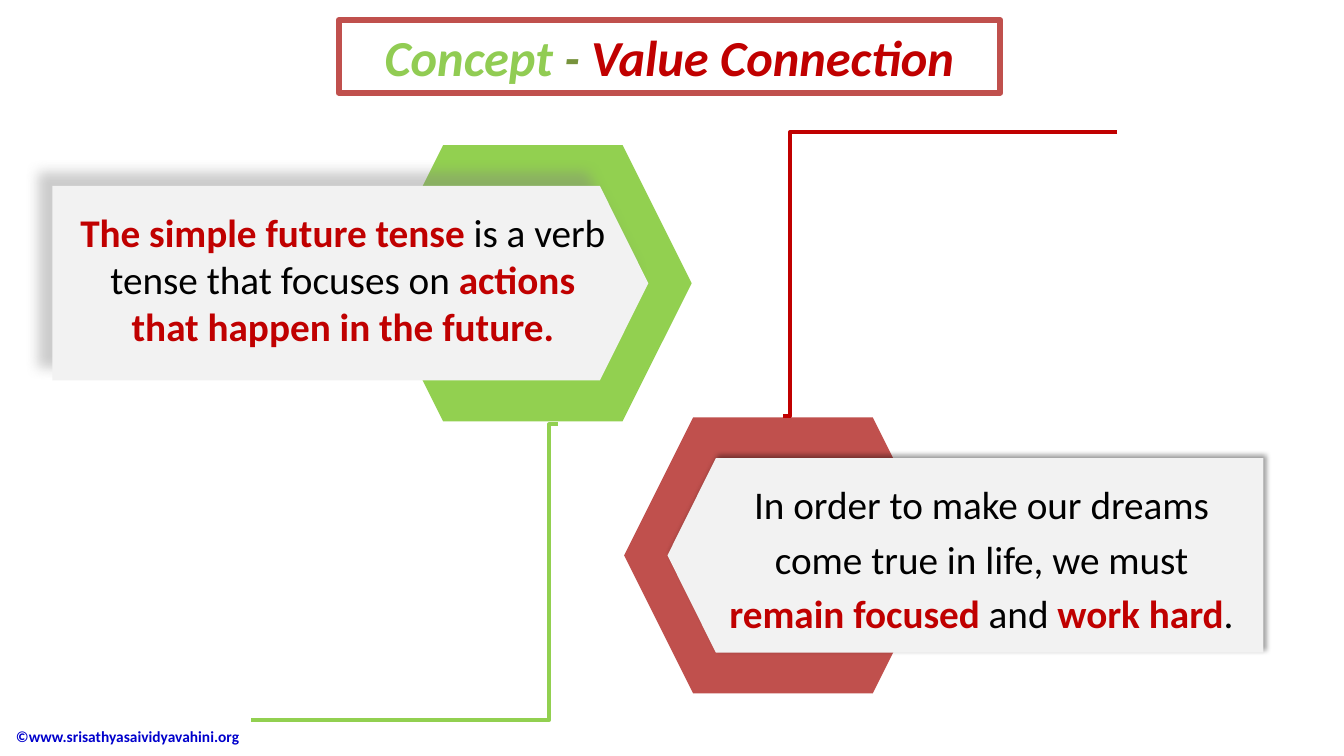
from lxml.etree import SubElement
from pptx import Presentation
from pptx.dml.color import RGBColor
from pptx.enum.shapes import MSO_CONNECTOR, MSO_SHAPE
from pptx.enum.text import MSO_ANCHOR, MSO_AUTO_SIZE, PP_ALIGN
from pptx.oxml.ns import qn
from pptx.util import Inches, Pt

WHITE = RGBColor(0xFF, 0xFF, 0xFF)
BLACK = RGBColor(0, 0, 0)
PANEL = RGBColor(0xF2, 0xF2, 0xF2)
GREEN = RGBColor(0x92, 0xD0, 0x50)
TITLE_GREEN = RGBColor(0x91, 0xCC, 0x53)
OLIVE = RGBColor(0x77, 0x93, 0x3C)
BRICK = RGBColor(0xC0, 0x50, 0x4D)
RED = RGBColor(0xC0, 0, 0)
BLUE = RGBColor(0, 0, 0xCC)

TITLE = [("Concept", TITLE_GREEN), (" - ", OLIVE), ("Value Connection", RED)]
CREDIT = "©www.srisathyasaividyavahini.org"
CARDS = [
    {
        "hexagon": (3.71, 1.44), "color": GREEN, "flat_x": 0.52, "direction": 1,
        "shadow": ("808080", 9, 14, 225),
        "text_at": (0.68, 2.02, 5.44, 1.51), "spacing": 1.0,
        "text": [("The simple future tense ", True),
                 ("is a verb tense that focuses on ", False),
                 ("actions that happen in the future.", True)],
    },
    {
        "hexagon": (6.19, 4.14), "color": BRICK, "flat_x": 12.53, "direction": -1,
        "shadow": ("000000", 4, 3, 315),
        "text_at": (7.11, 4.65, 5.25, 1.69), "spacing": 1.15,
        "text": [("In order to make our dreams come true in life, we must ", False),
                 ("remain focused ", True), ("and ", False),
                 ("work hard", True), (".", False)],
    },
]
ELBOWS = [((5.53, 4.21), (2.49, 7.14), GREEN, 0.027),
          ((11.08, 1.31), (7.77, 4.13), RED, 0.98)]

HEXAGON_W, HEXAGON_H = 3.15, 2.74
PANEL_W, PANEL_H, POINT_W = 5.91, 1.93, 0.48


def inches(values):
    return [Inches(value) for value in values]


def add_run(paragraph, text, color):
    run = paragraph.add_run()
    run.text = text
    run.font.color.rgb = color
    return run


def add_shadow(panel, color, blur, distance, angle):
    effects = panel._element.spPr.find(qn("a:effectLst"))
    shadow = SubElement(effects, qn("a:outerShdw"), blurRad=str(Pt(blur)),
                        dist=str(Pt(distance)), dir=str(angle * 60000),
                        algn="ctr", rotWithShape="0")
    tint = SubElement(shadow, qn("a:srgbClr"), val=color)
    SubElement(tint, qn("a:alpha"), val="40000")


def style_solid(shape, color):
    shape.shadow.inherit = False
    shape.fill.solid()
    shape.fill.fore_color.rgb = color
    shape.line.fill.background()


def add_card(slide, card):
    group = slide.shapes.add_group_shape()
    left, top = card["hexagon"]
    hexagon = group.shapes.add_shape(
        MSO_SHAPE.HEXAGON, *inches((left, top, HEXAGON_W, HEXAGON_H)))
    style_solid(hexagon, card["color"])

    flat_x, direction = card["flat_x"], card["direction"]
    panel_top = top + (HEXAGON_H - PANEL_H) / 2
    panel_bottom = panel_top + PANEL_H
    shoulder_x = flat_x + direction * (PANEL_W - POINT_W)
    tip_x = flat_x + direction * PANEL_W
    corners = [(shoulder_x, panel_top), (tip_x, panel_top + PANEL_H / 2),
               (shoulder_x, panel_bottom), (flat_x, panel_bottom)]
    outline = group.shapes.build_freeform(*inches((flat_x, panel_top)))
    outline.add_line_segments([inches(corner) for corner in corners])
    panel = outline.convert_to_shape()
    style_solid(panel, PANEL)
    add_shadow(panel, *card["shadow"])


def add_card_text(slide, card):
    frame = slide.shapes.add_textbox(*inches(card["text_at"])).text_frame
    frame.word_wrap = True
    frame.auto_size = MSO_AUTO_SIZE.SHAPE_TO_FIT_TEXT
    paragraph = frame.paragraphs[0]
    paragraph.alignment = PP_ALIGN.CENTER
    paragraph.line_spacing = card["spacing"]
    paragraph.font.name = "Calibri"
    paragraph.font.size = Pt(28)
    for text, key in card["text"]:
        add_run(paragraph, text, RED if key else BLACK).font.bold = key


def add_elbow(slide, start, end, color, bend):
    elbow = slide.shapes.add_connector(MSO_CONNECTOR.ELBOW, *inches(start + end))
    elbow.line.color.rgb = color
    elbow.line.width = Pt(3)
    properties = elbow._element.spPr
    SubElement(properties, qn("a:effectLst"))
    adjustments = properties.find(qn("a:prstGeom")).get_or_add_avLst()
    SubElement(adjustments, qn("a:gd"), name="adj1", fmla=f"val {round(bend * 100000)}")


def add_title(slide):
    title = slide.shapes.title
    title.left, title.top, title.width, title.height = inches((3.36, 0.2, 6.56, 0.72))
    title.fill.solid()
    title.fill.fore_color.rgb = WHITE
    title.line.color.rgb = BRICK
    title.line.width = Pt(4.5)
    frame = title.text_frame
    frame.auto_size = MSO_AUTO_SIZE.NONE
    frame.vertical_anchor = MSO_ANCHOR.MIDDLE
    heading = frame.paragraphs[0]
    heading.alignment = PP_ALIGN.CENTER
    heading.font.name = "Calibri"
    heading.font.size = Pt(36)
    heading.font.bold = heading.font.italic = True
    for text, color in TITLE:
        add_run(heading, text, color)


def add_credit(slide):
    frame = slide.shapes.add_textbox(*inches((0.06, 7.1, 3.53, 0.41))).text_frame
    frame.word_wrap = True
    frame.vertical_anchor = MSO_ANCHOR.MIDDLE
    credit = frame.paragraphs[0]
    credit.text = CREDIT
    credit.font.name = "Calibri"
    credit.font.size = Pt(11)
    credit.font.bold = True
    credit.font.color.rgb = BLUE


def main():
    deck = Presentation()
    deck.slide_width, deck.slide_height = inches((13.33, 7.5))
    slide = deck.slides.add_slide(deck.slide_layouts[5])
    add_credit(slide)
    add_title(slide)
    for card in CARDS:
        add_card(slide, card)
    for card in CARDS:
        add_card_text(slide, card)
    for elbow in ELBOWS:
        add_elbow(slide, *elbow)
    deck.save("out.pptx")


if __name__ == "__main__":
    main()
